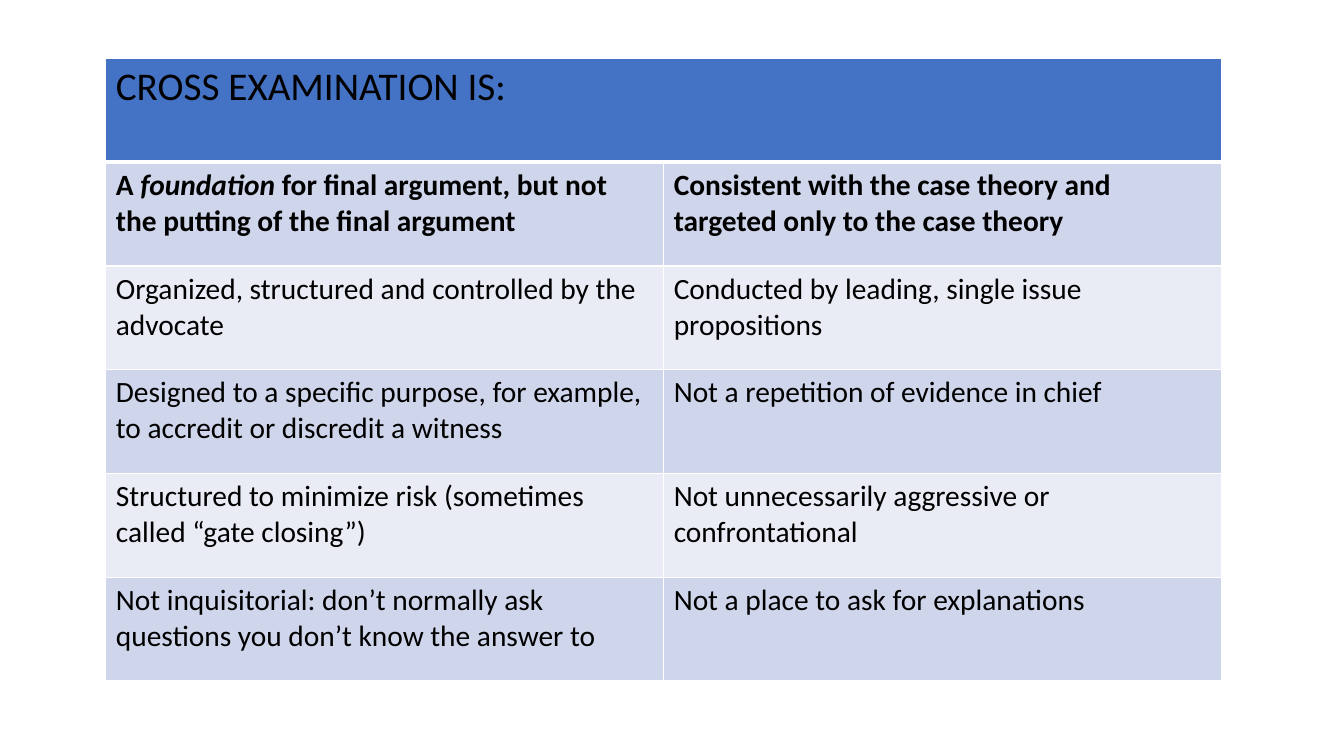
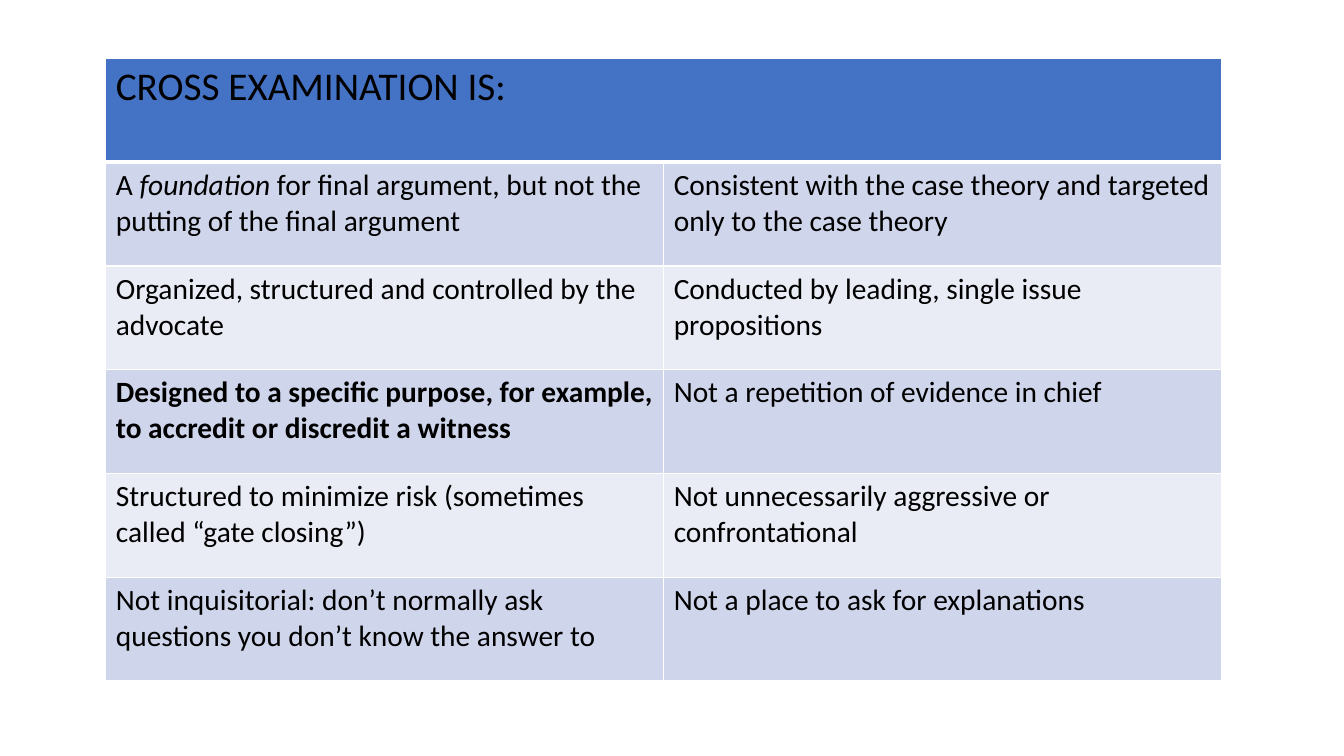
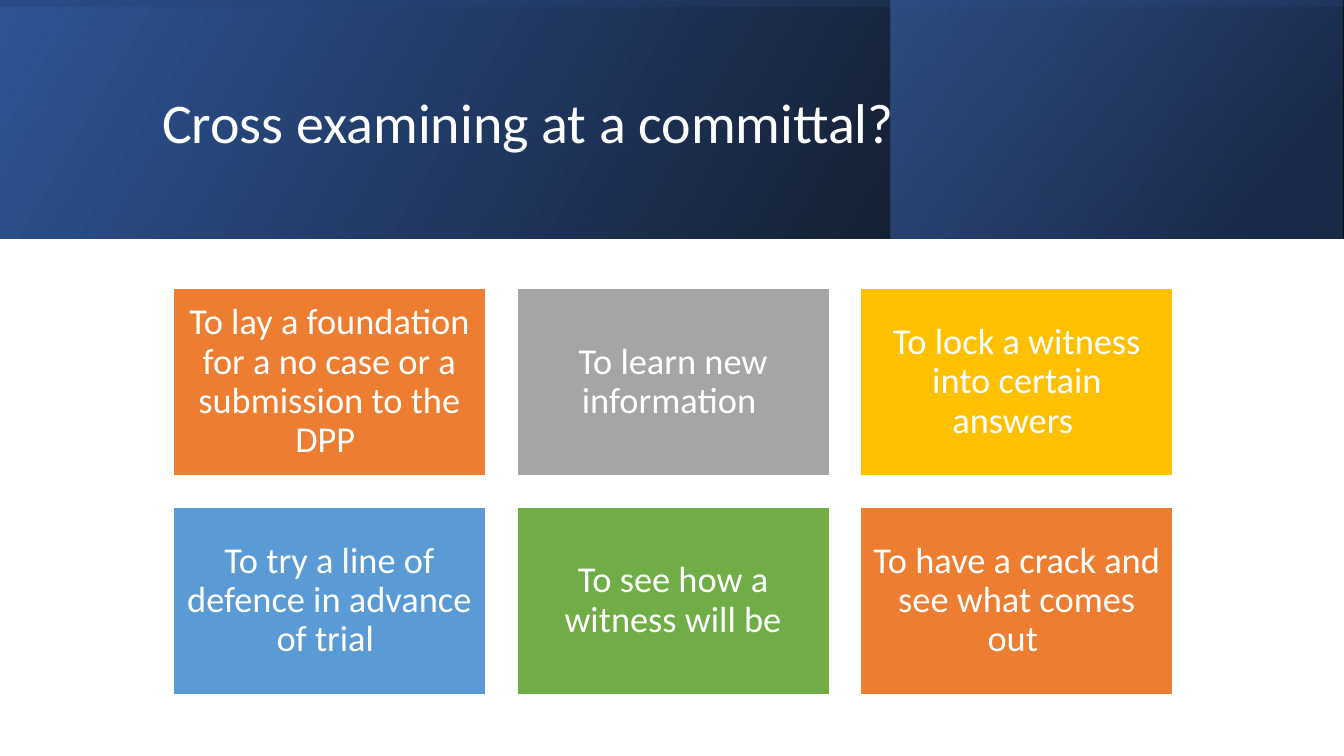
from dataclasses import dataclass

import pptx
import pptx.dml.color
import pptx.enum.shapes
import pptx.enum.text
import pptx.oxml
import pptx.oxml.ns
import pptx.util

Pt = pptx.util.Pt
RGBColor = pptx.dml.color.RGBColor
qn = pptx.oxml.ns.qn

FONT = "Calibri"
BLACK = RGBColor(0x00, 0x00, 0x00)
WHITE = RGBColor(0xFF, 0xFF, 0xFF)
BLUE = RGBColor(0x44, 0x72, 0xC4)
DEEP_BLUE = RGBColor(0x2F, 0x55, 0x97)
NAVY = RGBColor(0x20, 0x38, 0x64)
ROW_DARK = RGBColor(0xCF, 0xD5, 0xEA)
ROW_LIGHT = RGBColor(0xE9, 0xEB, 0xF5)
ORANGE = RGBColor(0xED, 0x7D, 0x31)
GRAY = RGBColor(0xA5, 0xA5, 0xA5)
GOLD = RGBColor(0xFF, 0xC0, 0x00)
SKY = RGBColor(0x5B, 0x9B, 0xD5)
GREEN = RGBColor(0x70, 0xAD, 0x47)

SLIDE_WIDTH, SLIDE_HEIGHT = 960, 540
BAND_HEIGHT = 170.6
TABLE_LEFT, TABLE_TOP = 75.6, 41.8
COLUMN_WIDTH, ROW_HEIGHT = 398.5, 74.1
CARD_LEFT, CARD_TOP = 123.8, 205.9
CARD_WIDTH, CARD_HEIGHT, CARD_GAP = 223.2, 133.9, 22.3
CARD_COLUMNS = 3
CARD_INSET = 7.9

TABLE_HEADING = "CROSS EXAMINATION IS:"
# Asterisks enclose italic words.
POINTS = [
    ("A *foundation* for final argument, but not the putting of the final argument",
     "Consistent with the case theory and targeted only to the case theory"),
    ("Organized, structured and controlled by the advocate",
     "Conducted by leading, single issue propositions"),
    ("Designed to a specific purpose, for example, to accredit or discredit a witness",
     "Not a repetition of evidence in chief"),
    ("Structured to minimize risk (sometimes called “gate closing”)",
     "Not unnecessarily aggressive or confrontational"),
    ("Not inquisitorial: don’t normally ask questions you don’t know the answer to",
     "Not a place to ask for explanations"),
]


@dataclass
class Stop:
    position: int
    color: RGBColor
    alpha: int = 100


@dataclass
class Band:
    left: float
    top: float
    width: float
    height: float
    angle: int
    stops: list[Stop]
    rotation: int = 0


@dataclass
class Card:
    text: str
    color: RGBColor


BANDS = [
    Band(0, 0, SLIDE_WIDTH, BAND_HEIGHT, 330,
         [Stop(0, BLACK, 96), Stop(100, DEEP_BLUE)]),
    Band(636.5, 0, 322.6, BAND_HEIGHT, 320,
         [Stop(19, NAVY, 68), Stop(100, BLUE, 48)]),
    Band((SLIDE_WIDTH - BAND_HEIGHT) / 2, (BAND_HEIGHT - SLIDE_WIDTH) / 2,
         BAND_HEIGHT, SLIDE_WIDTH, 350,
         [Stop(23, DEEP_BLUE, 16), Stop(99, BLACK, 45)], rotation=270),
]

CARDS = [
    Card("To lay a foundation for a no case or a submission to the DPP ", ORANGE),
    Card("To learn new information ", GRAY),
    Card("To lock a witness into certain answers ", GOLD),
    Card("To try a line of defence in advance of trial ", SKY),
    Card("To see how a witness will be", GREEN),
    Card("To have a crack and see what comes out ", ORANGE),
]


def write(frame, text: str, size: float, color: RGBColor, bold: bool = False):
    """Fill the first paragraph; words between asterisks become italic."""
    para = frame.paragraphs[0]
    first, *others = text.split("*")
    para.text = first
    for part in others:
        para.add_run().text = part
    for index, span in enumerate(para.runs):
        span.font.name = FONT
        span.font.size = Pt(size)
        span.font.color.rgb = color
        span.font.bold = bold
        span.font.italic = index % 2 == 1
    return para


def border_cell(cell, bottom: float = 1) -> None:
    properties = cell._tc.get_or_add_tcPr()
    for side, width in (("L", 1), ("R", 1), ("T", 1), ("B", bottom)):
        properties.append(pptx.oxml.parse_xml(
            f'<a:ln{side} {pptx.oxml.ns.nsdecls("a")} w="{Pt(width)}">'
            f'<a:solidFill><a:srgbClr val="{WHITE}"/></a:solidFill></a:ln{side}>'))


def fill_cell(cell, text: str, size: float, fill: RGBColor,
              bold: bool = False, bottom: float = 1) -> None:
    border_cell(cell, bottom)
    cell.fill.solid()
    cell.fill.fore_color.rgb = fill
    write(cell.text_frame, text, size, BLACK, bold)


def add_points_page(deck, bold_row: int) -> None:
    """Add the table of points with one row's cells emphasised."""
    page = deck.slides.add_slide(deck.slide_layouts[6])
    row_count = len(POINTS) + 1
    table = page.shapes.add_table(
        row_count, 2, Pt(TABLE_LEFT), Pt(TABLE_TOP),
        Pt(2 * COLUMN_WIDTH), Pt(row_count * ROW_HEIGHT)).table
    for column in table.columns:
        column.width = Pt(COLUMN_WIDTH)
    for row in table.rows:
        row.height = Pt(ROW_HEIGHT)
    heading = table.cell(0, 0)
    heading.merge(table.cell(0, 1))
    fill_cell(heading, TABLE_HEADING, 28, BLUE, bottom=3)
    for row_index, texts in enumerate(POINTS, start=1):
        fill = ROW_DARK if row_index % 2 else ROW_LIGHT
        for column_index, text in enumerate(texts):
            # Row 3 is emphasised in its left cell only.
            bold = row_index == bold_row and (row_index == 1 or column_index == 0)
            fill_cell(table.cell(row_index, column_index), text, 21, fill, bold)


def add_rectangle(page, left: float, top: float, width: float, height: float):
    shape = page.shapes.add_shape(
        pptx.enum.shapes.MSO_SHAPE.RECTANGLE,
        Pt(left), Pt(top), Pt(width), Pt(height))
    shape.shadow.inherit = False
    return shape


def add_band(page, band: Band) -> None:
    """Draw a mirrored rectangle with a translucent gradient."""
    shape = add_rectangle(page, band.left, band.top, band.width, band.height)
    shape.rotation = band.rotation
    shape.line.fill.background()
    shape.fill.background()
    properties = shape.element.spPr
    properties.find(qn("a:xfrm")).set("flipH", "1")
    stops = "".join(
        f'<a:gs pos="{stop.position * 1000}"><a:srgbClr val="{stop.color}">'
        f'<a:alpha val="{stop.alpha * 1000}"/></a:srgbClr></a:gs>'
        for stop in band.stops)
    gradient = pptx.oxml.parse_xml(
        f'<a:gradFill {pptx.oxml.ns.nsdecls("a")} rotWithShape="1">'
        f'<a:gsLst>{stops}</a:gsLst>'
        f'<a:lin ang="{band.angle * 60000}" scaled="0"/></a:gradFill>')
    properties.replace(properties.find(qn("a:noFill")), gradient)


def add_title(page, text: str) -> None:
    frame = page.shapes.add_textbox(Pt(108.7), Pt(27.4), Pt(765.4), Pt(123.8)).text_frame
    frame.word_wrap = True
    frame.vertical_anchor = pptx.enum.text.MSO_ANCHOR.MIDDLE
    write(frame, text, 40, WHITE).line_spacing = 0.9


def add_card(page, card: Card, index: int) -> None:
    row, column = divmod(index, CARD_COLUMNS)
    shape = add_rectangle(
        page, CARD_LEFT + column * (CARD_WIDTH + CARD_GAP),
        CARD_TOP + row * (CARD_HEIGHT + CARD_GAP), CARD_WIDTH, CARD_HEIGHT)
    shape.fill.solid()
    shape.fill.fore_color.rgb = card.color
    shape.line.color.rgb = WHITE
    shape.line.width = Pt(1)
    frame = shape.text_frame
    frame.word_wrap = True
    frame.vertical_anchor = pptx.enum.text.MSO_ANCHOR.MIDDLE
    frame.margin_left = frame.margin_right = Pt(CARD_INSET)
    frame.margin_top = frame.margin_bottom = Pt(CARD_INSET)
    para = write(frame, card.text, 26, WHITE)
    para.alignment = pptx.enum.text.PP_ALIGN.CENTER
    para.line_spacing = 0.9


def add_committal_page(deck) -> None:
    page = deck.slides.add_slide(deck.slide_layouts[6])
    for band in BANDS:
        add_band(page, band)
    add_title(page, "Cross examining at a committal?")
    for index, card in enumerate(CARDS):
        add_card(page, card, index)


def main() -> None:
    deck = pptx.Presentation()
    deck.slide_width = Pt(SLIDE_WIDTH)
    deck.slide_height = Pt(SLIDE_HEIGHT)
    for bold_row in (1, 3):
        add_points_page(deck, bold_row)
    add_committal_page(deck)
    deck.save("out.pptx")


if __name__ == "__main__":
    main()
